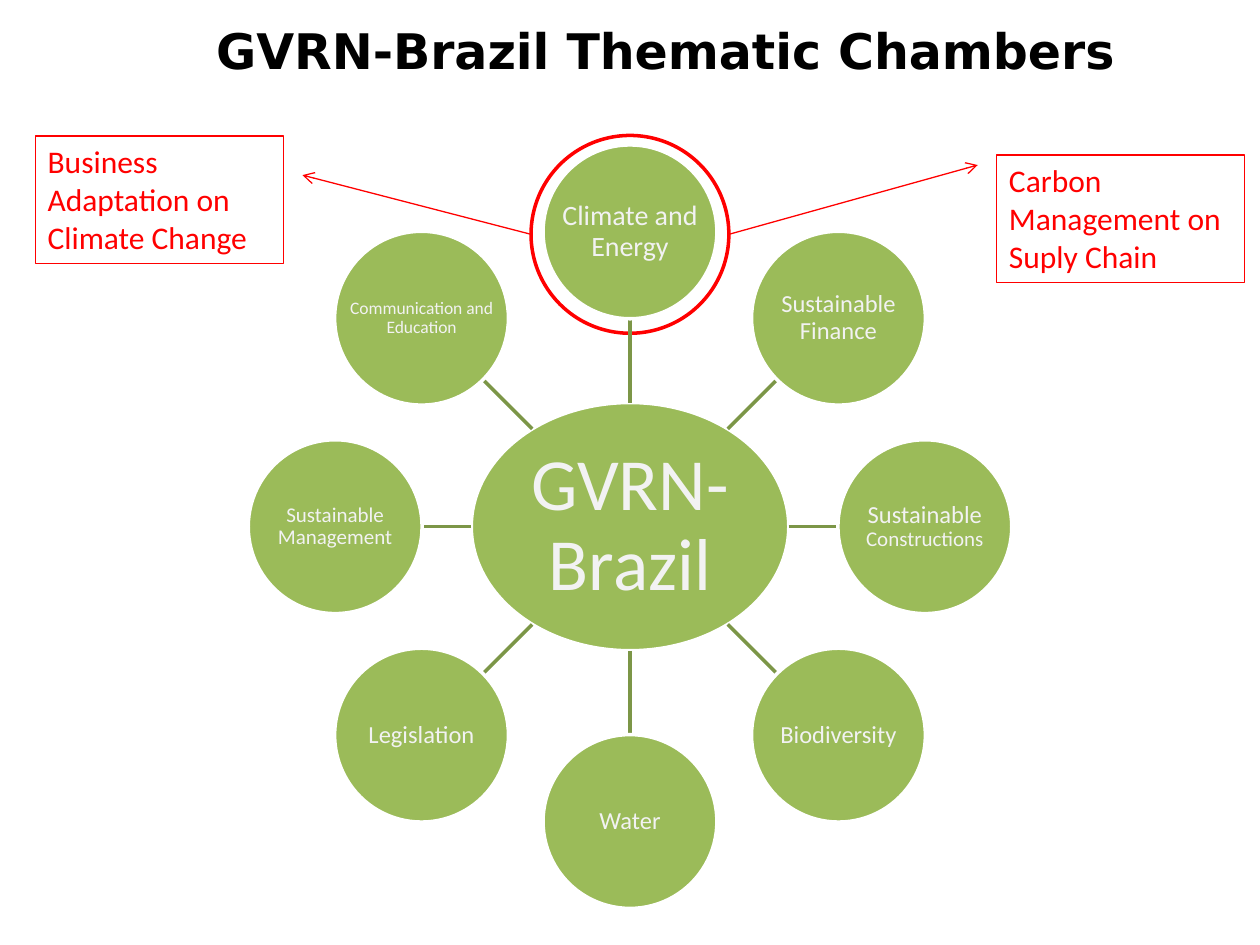
from math import cos, hypot, radians, sin

from lxml import etree
from pptx import Presentation
from pptx.dml.color import RGBColor
from pptx.enum.shapes import MSO_CONNECTOR as Link, MSO_SHAPE as Shape
from pptx.enum.text import MSO_ANCHOR as Anchor, PP_ALIGN as Align
from pptx.oxml.ns import qn
from pptx.util import Inches, Pt

GREEN = RGBColor(0x9B, 0xBB, 0x59)
OLIVE = RGBColor(0x7C, 0x96, 0x47)
RED = RGBColor(0xFF, 0x00, 0x00)
WHITE = RGBColor(0xFF, 0xFF, 0xFF)
PALE = RGBColor(0xF2, 0xF2, 0xF2)
BLACK = RGBColor(0x00, 0x00, 0x00)

# Wheel geometry, in inches
MID_X, MID_Y = 5, 4.18
HUB_W, HUB_H = 2.52, 1.97
RING, DISC, HALO = 2.34, 1.38, 1.57

# Themes clockwise from the top, each as (text, size) runs
THEMES = [
    [("Climate and Energy", 16)],
    [("Sustainable Finance", 14)],
    [("Sustainable ", 14), ("Constructions", 12)],
    [("Biodiversity", 14)],
    [("Water", 14)],
    [("Legislation", 14)],
    [("Sustainable Management", 12)],
    [("Communication and Education", 10)],
]


class Board:
    def __init__(self, slide, face="Calibri"):
        self.slide = slide
        self.face = face

    def style(self, run, size, color, face=None, bold=False):
        font = run.font
        font.name = face or self.face
        font.size = Pt(size)
        font.bold = bold
        font.color.rgb = color

    def title(self, text, left, top, width, height):
        box = self.slide.shapes.title
        box.left, box.top = Inches(left), Inches(top)
        box.width, box.height = Inches(width), Inches(height)
        frame = box.text_frame
        frame.text = text
        frame.vertical_anchor = Anchor.TOP
        para = frame.paragraphs[0]
        para.alignment = Align.CENTER
        self.style(para.runs[0], 28, BLACK, "DejaVu Sans", True)

    def oval(self, x, y, width, height, fill, line):
        oval = self.slide.shapes.add_shape(
            Shape.OVAL, Inches(x - width / 2), Inches(y - height / 2),
            Inches(width), Inches(height))
        oval.shadow.inherit = False
        oval.fill.solid()
        oval.fill.fore_color.rgb = fill
        oval.line.color.rgb = line
        oval.line.width = Pt(2)

    def label(self, x, y, width, height, parts, inset):
        box = self.slide.shapes.add_textbox(
            Inches(x - width / 2), Inches(y - height / 2),
            Inches(width), Inches(height))
        frame = box.text_frame
        frame.word_wrap = True
        frame.vertical_anchor = Anchor.MIDDLE
        frame.margin_left = frame.margin_right = Inches(inset)
        frame.margin_top = frame.margin_bottom = Inches(inset)
        para = frame.paragraphs[0]
        para.alignment = Align.CENTER
        para.line_spacing = 0.9
        for text, size in parts:
            run = para.add_run()
            run.text = text
            self.style(run, size, PALE)

    def disc(self, x, y, width, height, parts, inset):
        self.oval(x, y, width, height, GREEN, WHITE)
        self.label(x, y, width, height, parts, inset)

    def line(self, start, end, color, width, arrow=False):
        line = self.slide.shapes.add_connector(
            Link.STRAIGHT, *[Inches(v) for v in (*start, *end)])
        line.line.color.rgb = color
        line.line.width = Pt(width)
        if arrow:
            tail = etree.SubElement(line.line._get_or_add_ln(), qn("a:tailEnd"))
            tail.set("type", "arrow")
        etree.SubElement(line._element.spPr, qn("a:effectLst"))

    def note(self, text, left, top):
        box = self.slide.shapes.add_textbox(
            Inches(left), Inches(top), Inches(1.97), Inches(1.01))
        box.line.color.rgb = RED
        box.line.width = Pt(0.75)
        frame = box.text_frame
        frame.word_wrap = True
        frame.text = text
        self.style(frame.paragraphs[0].runs[0], 18, RED)


def main():
    deck = Presentation()
    deck.slide_width, deck.slide_height = Inches(10), Inches(7.5)
    board = Board(deck.slides.add_slide(deck.slide_layouts[5]))
    board.title("GVRN-Brazil Thematic Chambers", 0.28, 0.11, 10, 0.57)

    # Red halo behind the top theme, then the hub
    halo_y = 1.86
    board.oval(MID_X, halo_y, HALO, HALO, WHITE, RED)
    board.disc(MID_X, MID_Y, HUB_W, HUB_H, [("GVRN-Brazil", 42)], 0.03)

    # Spokes run from the hub's edge to each theme's edge
    for i, parts in enumerate(THEMES):
        angle = radians(i * 360 / len(THEMES) - 90)
        dx, dy = cos(angle), sin(angle)
        edge = 1 / hypot(dx / (HUB_W / 2), dy / (HUB_H / 2))
        start, end, hub = [(MID_X + r * dx, MID_Y + r * dy)
                           for r in (edge, RING - DISC / 2, RING)]
        board.line(start, end, OLIVE, 2)
        board.disc(*hub, DISC, DISC, parts, 0.01)

    # Arrows from the halo to the notes
    board.line((MID_X + HALO / 2, halo_y), (7.76, 1.31), RED, 0.75, True)
    board.line((MID_X - HALO / 2, halo_y), (2.4, 1.39), RED, 0.75, True)
    board.note("Carbon Management on Suply Chain", 7.91, 1.23)
    board.note("Business Adaptation on Climate Change", 0.28, 1.08)

    deck.save("out.pptx")


if __name__ == "__main__":
    main()
